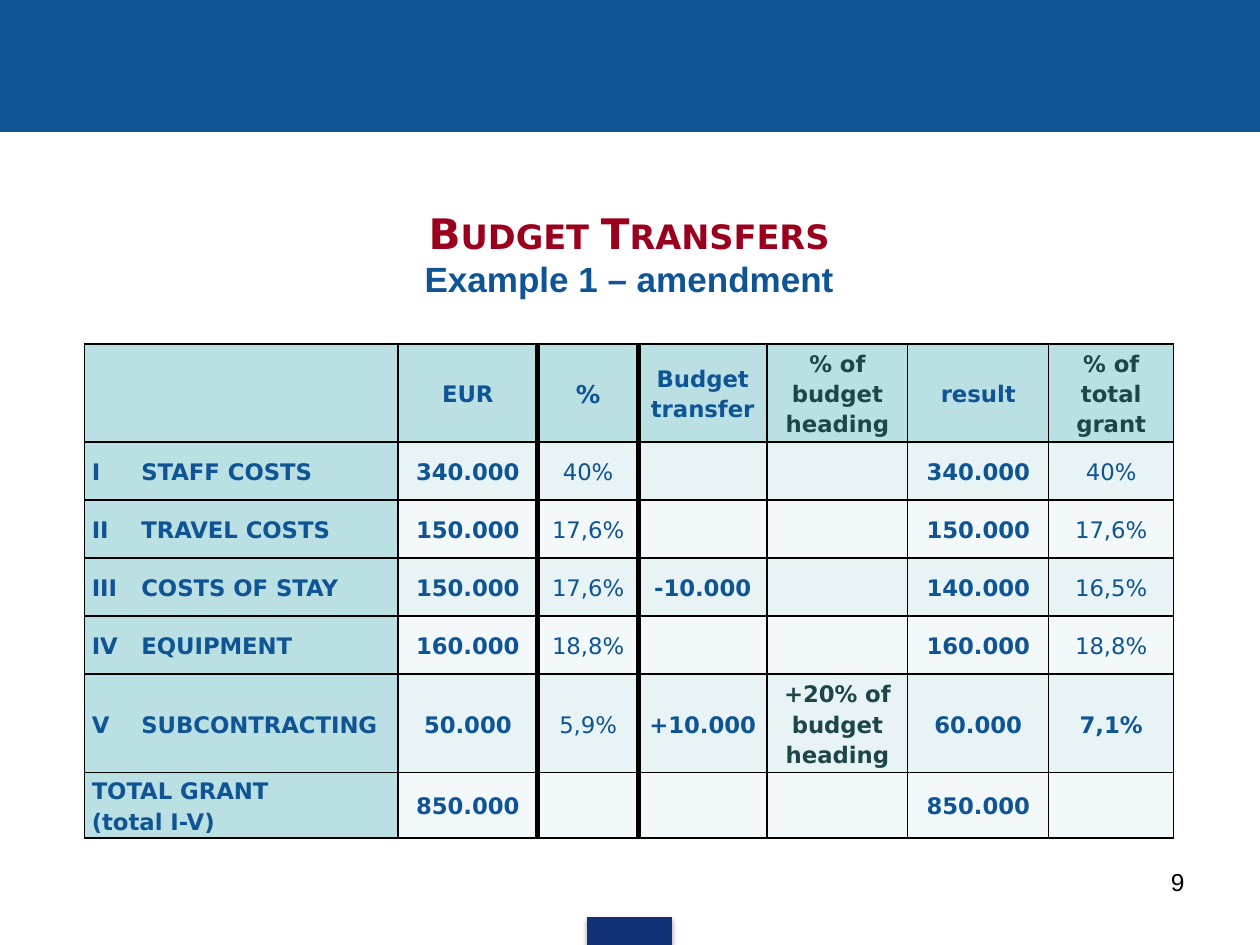
import pptx
import pptx.dml.color
import pptx.enum.shapes
import pptx.enum.text
import pptx.oxml
import pptx.oxml.ns
import pptx.util

Cm = pptx.util.Cm
Pt = pptx.util.Pt
ALIGN = pptx.enum.text.PP_ALIGN
MIDDLE = pptx.enum.text.MSO_ANCHOR.MIDDLE
NAMESPACE = pptx.oxml.ns.nsdecls("a")

COLORS = {
    "blue": "0F5494",
    "navy": "133176",
    "red": "9A001D",
    "dark_teal": "1E4649",
    "heading_fill": "BBE0E3",
    "odd_fill": "E7F3F4",
    "even_fill": "F3F9FA",
    "black": "000000",
}
TABLE_FONT = "DejaVu Sans"

HEADINGS = ["", "EUR", "%", "Budget transfer", "% of budget heading",
            "result", "% of total grant"]
BUDGET_ROWS = [
    ["I\tSTAFF COSTS", "340.000", "40%", "", "", "340.000", "40%"],
    ["II\tTRAVEL COSTS", "150.000", "17,6%", "", "", "150.000", "17,6%"],
    ["III\tCOSTS OF STAY", "150.000", "17,6%", "-10.000", "", "140.000", "16,5%"],
    ["IV\tEQUIPMENT", "160.000", "18,8%", "", "", "160.000", "18,8%"],
    ["V\tSUBCONTRACTING", "50.000", "5,9%", "+10.000", "+20% of budget heading",
     "60.000", "7,1%"],
    ["TOTAL GRANT\v(total I-V)", "850.000", "", "", "", "850.000", ""],
]
COLUMN_WIDTHS = [6.32, 2.82, 2.03, 2.59, 2.84, 2.84, 2.52]
ROW_HEIGHTS = [1.98, 1.17, 1.17, 1.17, 1.17, 1.98, 1.32]
PERCENT_COLUMNS = (2, 6)
THICK_EDGES = (2, 3)  # columns whose left edge is thick
HIGHLIGHT = (5, 6)  # the share changed by the transfer


def rgb(name):
    return pptx.dml.color.RGBColor.from_string(COLORS[name])


def style_paragraph(paragraph, font_name, size, color, bold, alignment):
    paragraph.alignment = alignment
    font = paragraph.font
    font.name = font_name
    font.size = Pt(size)
    font.bold = bold
    font.color.rgb = rgb(color)


def add_bar(slide, left, top, width, height, color):
    shape = slide.shapes.add_shape(
        pptx.enum.shapes.MSO_SHAPE.RECTANGLE,
        Cm(left), Cm(top), Cm(width), Cm(height))
    shape.shadow.inherit = False
    shape.fill.solid()
    shape.fill.fore_color.rgb = rgb(color)
    shape.line.color.rgb = rgb(color)
    shape.line.width = Pt(0.75)
    return shape


def add_soft_shadow(shape):
    effects = shape._element.spPr.find(pptx.oxml.ns.qn("a:effectLst"))
    effects.append(pptx.oxml.parse_xml(
        f'<a:outerShdw {NAMESPACE} blurRad="{Pt(3.1)}" dist="{Pt(1.8)}" '
        f'dir="5400000" rotWithShape="0"><a:srgbClr val="{COLORS["black"]}">'
        '<a:alpha val="35000"/></a:srgbClr></a:outerShdw>'))


def add_text_frame(slide, left, top, width, height):
    box = slide.shapes.add_textbox(Cm(left), Cm(top), Cm(width), Cm(height))
    box.text_frame.word_wrap = True
    return box.text_frame


def add_title(slide):
    frame = add_text_frame(slide, 2.69, 4.04, 19.99, 2.13)
    frame.vertical_anchor = MIDDLE
    title = frame.paragraphs[0]
    title.text = "Budget Transfers"
    title.runs[0]._r.get_or_add_rPr().set("cap", "small")
    style_paragraph(title, TABLE_FONT, 24, "red", True, ALIGN.CENTER)
    subtitle = frame.add_paragraph()
    subtitle.text = "Example 1 – amendment"
    style_paragraph(subtitle, "Arial", 20, "blue", True, ALIGN.CENTER)


def set_borders(cell, column):
    widths = {
        "lnL": 3 if column in THICK_EDGES else 1,
        "lnR": 3 if column + 1 in THICK_EDGES else 1,
        "lnT": 1,
        "lnB": 1,
    }
    properties = cell._tc.get_or_add_tcPr()
    for position, (tag, width) in enumerate(widths.items()):
        properties.insert(position, pptx.oxml.parse_xml(
            f'<a:{tag} {NAMESPACE} w="{Pt(width)}"><a:solidFill>'
            f'<a:srgbClr val="{COLORS["black"]}"/></a:solidFill></a:{tag}>'))


def add_tab_stop(paragraph, position):
    paragraph._p.get_or_add_pPr().append(pptx.oxml.parse_xml(
        f'<a:tabLst {NAMESPACE}><a:tab pos="{Cm(position)}" algn="l"/></a:tabLst>'))


def fill_cell(cell, row, column, text):
    if row == 0 or column == 0:
        fill = "heading_fill"
    else:
        fill = "odd_fill" if row % 2 else "even_fill"
    cell.fill.solid()
    cell.fill.fore_color.rgb = rgb(fill)
    set_borders(cell, column)
    cell.vertical_anchor = MIDDLE
    cell.margin_left = cell.margin_right = Cm(0.15)
    cell.margin_top = cell.margin_bottom = 0

    paragraph = cell.text_frame.paragraphs[0]
    paragraph.text = text
    paragraph.line_spacing = 1.15
    if "\t" in text:
        add_tab_stop(paragraph, 1)
    style_paragraph(
        paragraph, TABLE_FONT,
        size=14 if text == "%" else 13,
        color="dark_teal" if "% of" in text else "blue",
        bold=row == 0 or column not in PERCENT_COLUMNS or (row, column) == HIGHLIGHT,
        alignment=ALIGN.CENTER if column else ALIGN.LEFT)


def add_budget_table(slide):
    rows = [HEADINGS] + BUDGET_ROWS
    table = slide.shapes.add_table(
        len(rows), len(HEADINGS), Cm(1.7), Cm(6.93),
        Cm(sum(COLUMN_WIDTHS)), Cm(sum(ROW_HEIGHTS))).table
    table.first_row = table.horz_banding = False
    for column, width in zip(table.columns, COLUMN_WIDTHS):
        column.width = Cm(width)
    for row, height in zip(table.rows, ROW_HEIGHTS):
        row.height = Cm(height)
    for row, texts in enumerate(rows):
        for column, text in enumerate(texts):
            fill_cell(table.cell(row, column), row, column, text)


def add_page_number(slide):
    paragraph = add_text_frame(slide, 18.21, 17.35, 5.92, 1.32).paragraphs[0]
    paragraph.text = "9"
    style_paragraph(paragraph, "Arial", 14, "black", False, ALIGN.RIGHT)


def main():
    presentation = pptx.Presentation()
    presentation.slide_width = Cm(25.4)
    presentation.slide_height = Cm(19.05)
    slide = presentation.slides.add_slide(presentation.slide_layouts[6])

    # Header band and footer tab
    add_bar(slide, 0, 0, 25.4, 2.66, "blue")
    add_soft_shadow(add_bar(slide, 11.84, 18.49, 1.7, 0.56, "navy"))

    # Content
    add_title(slide)
    add_budget_table(slide)
    add_page_number(slide)

    presentation.save("out.pptx")


if __name__ == "__main__":
    main()
